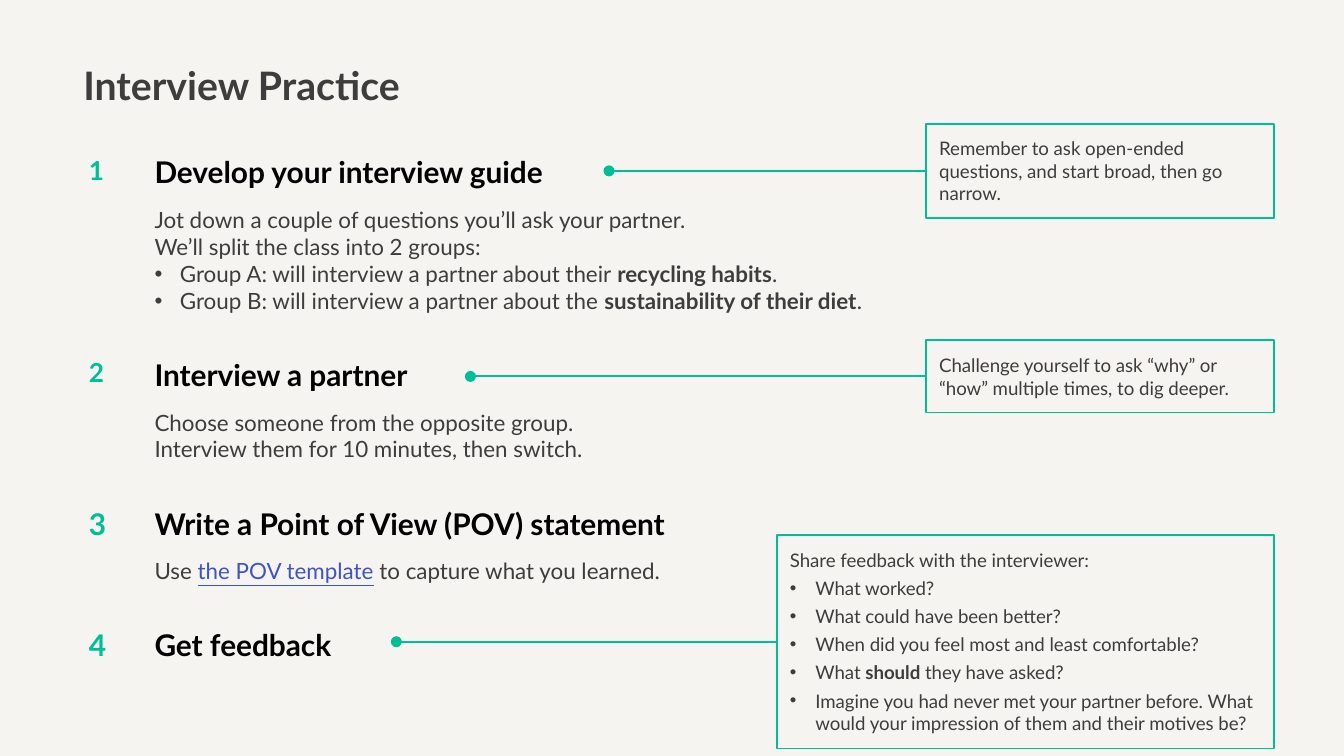
from lxml.etree import SubElement
from pptx import Presentation
from pptx.dml.color import RGBColor
from pptx.enum.shapes import MSO_CONNECTOR, MSO_SHAPE
from pptx.enum.text import MSO_ANCHOR, PP_ALIGN
from pptx.oxml.ns import qn
from pptx.util import Cm, Pt

BACKGROUND = RGBColor(0xF5, 0xF4, 0xF0)
GREEN = RGBColor(0x00, 0xBF, 0x97)
GREY = RGBColor(0x3C, 0x3D, 0x3C)
BLACK = RGBColor(0x00, 0x00, 0x00)
LINK_BLUE = RGBColor(0x3F, 0x54, 0xBF)
NO_GRID_STYLE = "{2D5ABB26-0587-4C30-8999-92F81FD0307C}"


def write(frame, text, size, color=GREY, bold=False, linked=False, gap=0):
    for index, line in enumerate(text.split("\n")):
        paragraph = frame.paragraphs[0] if index == 0 else frame.add_paragraph()
        paragraph.alignment = PP_ALIGN.LEFT
        if line.startswith("• "):
            line = line[2:]
            properties = paragraph._p.get_or_add_pPr()
            properties.set("marL", str(Cm(0.48)))
            properties.set("indent", str(-Cm(0.48)))
            SubElement(properties, qn("a:buFont"), typeface="Arial")
            SubElement(properties, qn("a:buChar"), char="•")
        if index and gap:
            paragraph.space_before = Pt(gap)
        for part, words in enumerate(line.split("*")):
            marked = part % 2 == 1
            run = paragraph.add_run()
            run.text = words
            run.font.name = "Lato"
            run.font.size = Pt(size)
            run.font.bold = bold or (marked and not linked)
            run.font.underline = marked and linked
            run.font.color.rgb = LINK_BLUE if marked and linked else color


deck = Presentation()
deck.slide_width, deck.slide_height = Cm(25.4), Cm(14.29)
slide = deck.slides.add_slide(deck.slide_layouts[5])
slide.background.fill.solid()
slide.background.fill.fore_color.rgb = BACKGROUND

title = slide.shapes.title
title.left, title.top, title.width, title.height = Cm(1.32), Cm(1.14), Cm(22.76), Cm(1.04)
title.text_frame.vertical_anchor = MSO_ANCHOR.MIDDLE
write(title.text_frame, "Interview Practice", size=21, bold=True)
title.text_frame.paragraphs[0].line_spacing = 0.9

steps = [
    (14, "Develop your interview guide",
     "Jot down a couple of questions you’ll ask your partner.\n"
     "We’ll split the class into 2 groups:\n"
     "• Group A: will interview a partner about their *recycling habits*.\n"
     "• Group B: will interview a partner about the *sustainability of their diet*."),
    (14, "Interview a partner",
     "Choose someone from the opposite group.\n"
     "Interview them for 10 minutes, then switch."),
    (16, "Write a Point of View (POV) statement",
     "Use *the POV template* to capture what you learned."),
    (16, "Get feedback", ""),
]
agenda_frame = slide.shapes.add_table(7, 2, Cm(1.3), Cm(2.77), Cm(18.21), Cm(9.88))
agenda = agenda_frame.table
agenda_frame._element.find(".//" + qn("a:tableStyleId")).text = NO_GRID_STYLE
agenda.first_row = agenda.horz_banding = False
agenda.columns[0].width, agenda.columns[1].width = Cm(1.24), Cm(16.97)
for cell in agenda.iter_cells():
    cell.fill.background()
    cell.margin_left = cell.margin_right = Cm(0.38)
    cell.margin_top = cell.margin_bottom = Cm(0.15)
for index, (number_size, heading, details) in enumerate(steps):
    row = 2 * index
    agenda.rows[row].height = Cm(0.98)
    write(agenda.cell(row, 0).text_frame, str(index + 1), size=number_size, color=GREEN, bold=True)
    write(agenda.cell(row, 1).text_frame, heading, size=16, color=BLACK, bold=True)
    if details:
        agenda.rows[row + 1].height = Cm(0.81 + 0.51 * len(details.split("\n")))
        write(agenda.cell(row + 1, 1).text_frame, details, size=12, linked="template" in details)

CALLOUT_RIGHT = 24.08
callouts = [
    (11.51, 17.5, 2.34, 1.78,
     "Remember to ask open-ended questions, and start broad, then go narrow."),
    (8.89, 17.5, 6.43, 1.37,
     "Challenge yourself to ask “why” or “how” multiple times, to dig deeper."),
    (7.49, 14.68, 10.11, 4.04,
     "Share feedback with the interviewer:\n"
     "• What worked?\n"
     "• What could have been better?\n"
     "• When did you feel most and least comfortable?\n"
     "• What *should* they have asked?\n"
     "• Imagine you had never met your partner before. "
     "What would your impression of them and their motives be?"),
]
for dot, left, top, height, advice in callouts:
    middle = Cm(top + height / 2)
    leader = slide.shapes.add_connector(MSO_CONNECTOR.STRAIGHT, Cm(dot), middle, Cm(left), middle)
    callout = slide.shapes.add_shape(
        MSO_SHAPE.RECTANGLE, Cm(left), Cm(top), Cm(CALLOUT_RIGHT - left), Cm(height))
    for outlined in (leader, callout):
        outlined.line.color.rgb = GREEN
        outlined.line.width = Pt(1)
    SubElement(leader.line._get_or_add_ln(), qn("a:headEnd"), type="oval")
    SubElement(leader._element.spPr, qn("a:effectLst"))
    callout.shadow.inherit = False
    callout.fill.background()
    frame = callout.text_frame
    frame.word_wrap = True
    frame.vertical_anchor = MSO_ANCHOR.MIDDLE
    frame.margin_left = frame.margin_right = frame.margin_top = frame.margin_bottom = Cm(0.25)
    write(frame, advice, size=10, gap=3)

deck.save("out.pptx")
